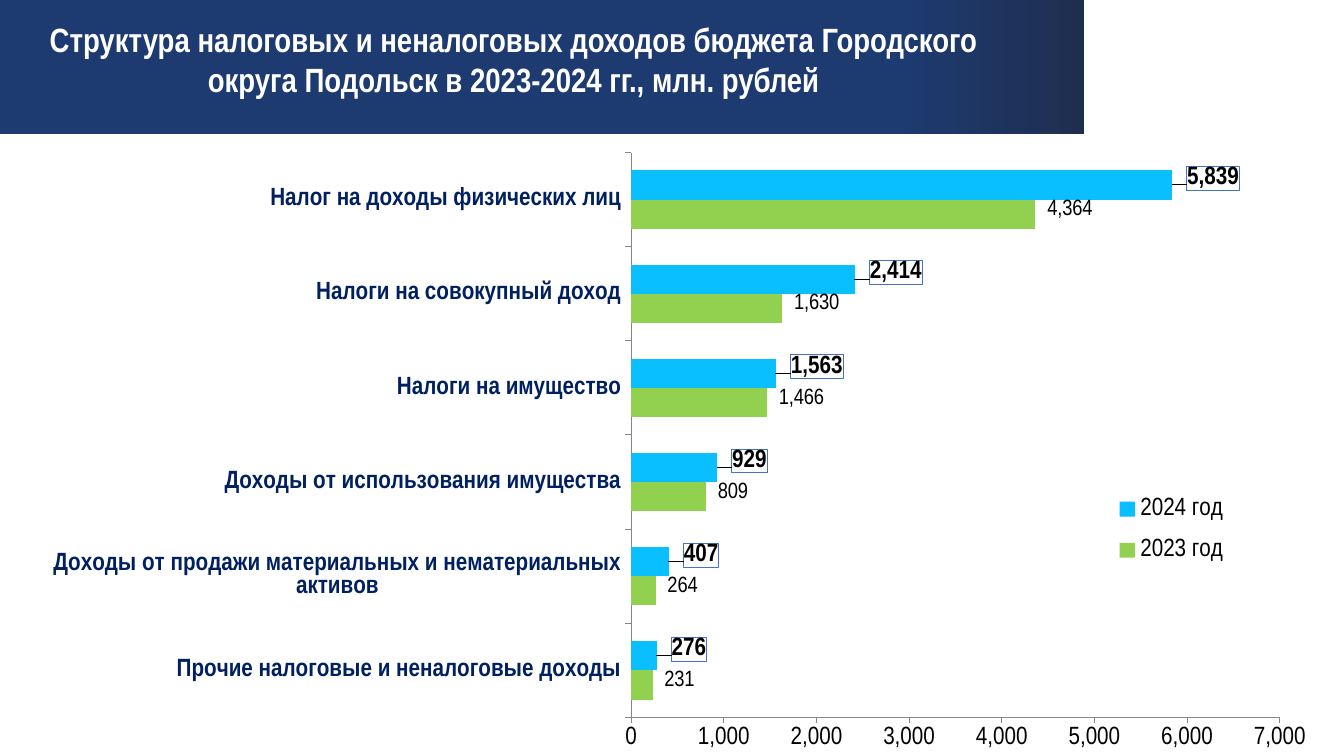
from copy import deepcopy

from lxml import etree
from pptx import Presentation
from pptx import util as u
from pptx.chart import data as chartdata
from pptx.dml import color
from pptx.enum import chart as charts, shapes, text
from pptx.oxml import ns

PX = 914400 / 100.8
TITLE = ("Структура налоговых и неналоговых доходов бюджета Городского "
         "округа Подольск в 2023-2024 гг., млн. рублей")
INCOME = [
    ("Прочие налоговые и неналоговые доходы", 231, 276),
    ("Доходы от продажи материальных и нематериальных активов", 264, 407),
    ("Доходы от использования имущества", 809, 929),
    ("Налоги на имущество", 1466, 1563),
    ("Налоги на совокупный доход", 1630, 2414),
    ("Налог на доходы физических лиц", 4364, 5839),
]
YEARS = [
    {"name": "2023 год", "fill": "92D050", "size": 16, "bold": False,
     "shift": (0.006, -0.007), "border": None},
    {"name": "2024 год", "fill": "09BFFF", "size": 18, "bold": True,
     "shift": (0.008, -0.011), "border": "4472C4"},
]


def px(*lengths):
    return [u.Emu(round(length * PX)) for length in lengths]


def rgb(value):
    return color.RGBColor.from_string(value)


def apply(target, **values):
    for name, value in values.items():
        setattr(target, name, value)


def add_layout(parent, **places):
    layout = parent.find(ns.qn("c:layout"))
    if layout is None:
        layout = etree.SubElement(parent, ns.qn("c:layout"))
    manual = etree.SubElement(layout, ns.qn("c:manualLayout"))
    for tag, value in places.items():
        etree.SubElement(manual, ns.qn("c:" + tag)).set("val", str(value))
    return layout


class IncomePage:
    """Holds the style and the current slide, and draws its elements."""

    face = "Arial Narrow"
    axis_line = "868686"

    def __init__(self, deck):
        self.page = deck.slides.add_slide(deck.slide_layouts[6])

    def font(self, font, size, tint, bold=False):
        apply(font, name=self.face, size=u.Pt(size), bold=bold)
        font.color.rgb = rgb(tint)

    def banner(self, area, stops):
        band = self.page.shapes.add_shape(shapes.MSO_SHAPE.RECTANGLE, *px(*area))
        band.shadow.inherit = False
        band.line.fill.background()
        band.fill.gradient()
        band.fill.gradient_angle = 0
        for stop, (position, tint) in zip(band.fill.gradient_stops, stops):
            stop.position = position
            stop.color.rgb = rgb(tint)

    def title(self, area, words):
        box = self.page.shapes.add_textbox(*px(*area))
        apply(box.text_frame, word_wrap=True,
              auto_size=text.MSO_AUTO_SIZE.SHAPE_TO_FIT_TEXT)
        para = box.text_frame.paragraphs[0]
        para.alignment = text.PP_ALIGN.CENTER
        span = para.add_run()
        span.text = words
        self.font(span.font, 24, "FFFFFF", True)

    def bar_chart(self, area):
        values = chartdata.CategoryChartData(number_format="#,##0")
        values.categories = [row[0] for row in INCOME]
        for index, year in enumerate(YEARS, 1):
            values.add_series(year["name"], [row[index] for row in INCOME])
        chart = self.page.shapes.add_chart(
            charts.XL_CHART_TYPE.BAR_CLUSTERED, *px(*area), values).chart
        apply(chart, has_title=False, has_legend=True)
        self.font(chart.font, 18, "000000")
        plot = chart.plots[0]
        apply(plot, gap_width=122, overlap=0, vary_by_categories=False)
        for series, year in zip(plot.series, YEARS):
            series.format.fill.solid()
            series.format.fill.fore_color.rgb = rgb(year["fill"])
            self.labels(series, year)
        self.axes(chart)
        self.legend(chart.legend)
        add_layout(chart._chartSpace.chart.plotArea, layoutTarget="inner",
                   xMode="edge", yMode="edge", x=0.471, y=0.001, w=0.491, h=0.957)

    def labels(self, series, year):
        labels = series.data_labels
        apply(labels, show_value=True, number_format="#,##0",
              number_format_is_linked=False,
              position=charts.XL_LABEL_POSITION.OUTSIDE_END)
        self.font(labels.font, year["size"], "000000", year["bold"])
        group = labels._element
        if year["border"]:
            frame = etree.Element(ns.qn("c:spPr"))
            line = etree.SubElement(frame, ns.qn("a:ln"), w="9525")
            fill = etree.SubElement(line, ns.qn("a:solidFill"))
            etree.SubElement(fill, ns.qn("a:srgbClr"), val=year["border"])
            group.find(ns.qn("c:numFmt")).addnext(frame)
        shared = list(group)
        across, down = year["shift"]
        for index in range(len(INCOME)):
            label = etree.Element(ns.qn("c:dLbl"))
            etree.SubElement(label, ns.qn("c:idx")).set("val", str(index))
            add_layout(label, x=across, y=down)
            label.extend(deepcopy(shared))
            group.insert(index, label)

    def axes(self, chart):
        for axis in (chart.category_axis, chart.value_axis):
            apply(axis, has_major_gridlines=False,
                  major_tick_mark=charts.XL_TICK_MARK.OUTSIDE,
                  minor_tick_mark=charts.XL_TICK_MARK.NONE)
            axis.format.line.color.rgb = rgb(self.axis_line)
            axis.format.line.width = u.Pt(0.75)
        self.font(chart.category_axis.tick_labels.font, 18, "002060", True)
        self.font(chart.value_axis.tick_labels.font, 18, "000000")
        apply(chart.value_axis, minimum_scale=0, maximum_scale=7000, major_unit=1000)
        apply(chart.value_axis.tick_labels, number_format="#,##0",
              number_format_is_linked=False)

    def legend(self, legend):
        apply(legend, position=charts.XL_LEGEND_POSITION.RIGHT, include_in_layout=False)
        self.font(legend.font, 18, "000000")
        layout = add_layout(legend._element, xMode="edge", yMode="edge",
                            x=0.83, y=0.555, w=0.1, h=0.17)
        legend._element.find(ns.qn("c:legendPos")).addnext(layout)


def main():
    deck = Presentation()
    deck.slide_width, deck.slide_height = px(1344, 756)
    income = IncomePage(deck)
    income.banner((0, 0, 1084, 134), [(0.83, "1D3B70"), (1, "1F2E4F")])
    income.title((0, 14, 1027, 92), TITLE)
    income.bar_chart((9, 152, 1321, 598))
    deck.save("out.pptx")


if __name__ == "__main__":
    main()
